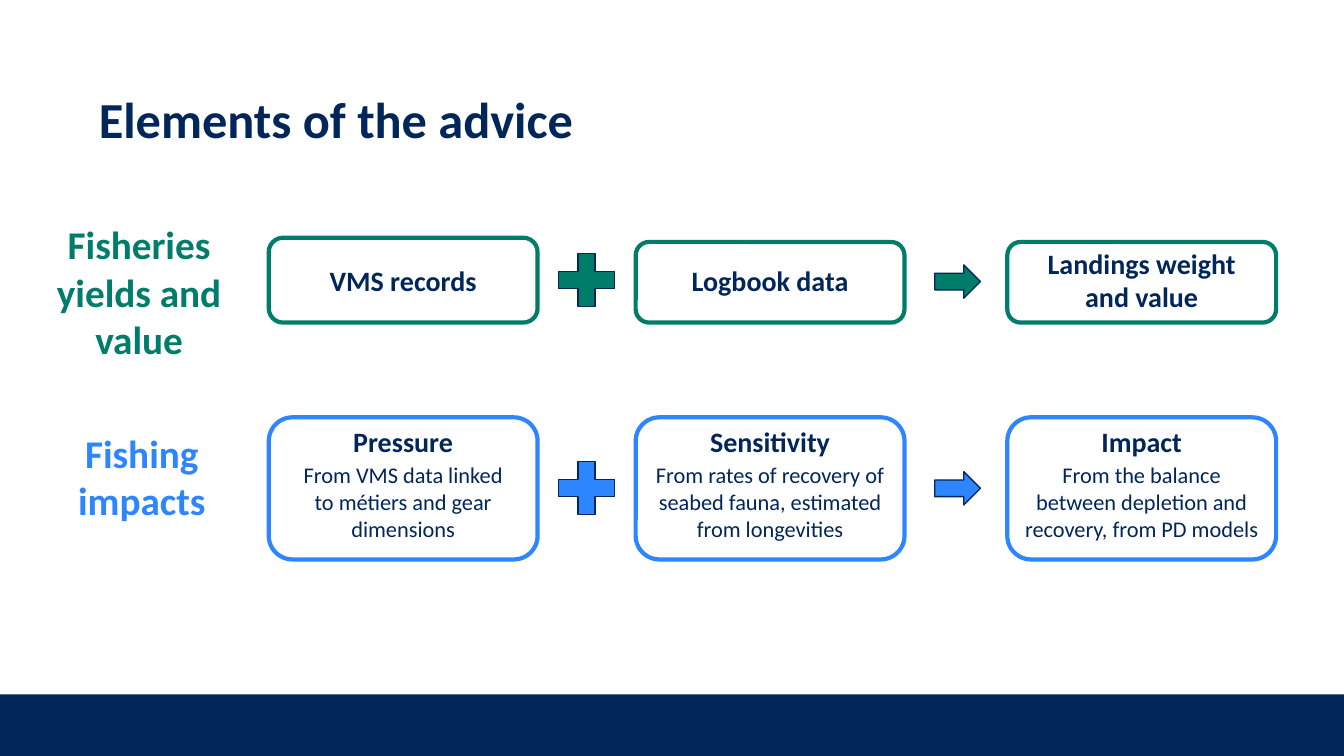
from pptx import Presentation
from pptx.dml.color import RGBColor
from pptx.enum.shapes import MSO_SHAPE
from pptx.enum.text import MSO_ANCHOR, MSO_AUTO_SIZE, PP_ALIGN
from pptx.util import Inches, Pt

NAVY = RGBColor(0x00, 0x26, 0x5A)
GREEN = RGBColor(0x00, 0x7C, 0x6B)
BLUE = RGBColor(0x2D, 0x86, 0xFF)
WHITE = RGBColor(0xFF, 0xFF, 0xFF)

FONT = "Calibri"
WIDE, HIGH = Inches(13.33), Inches(7.5)

# Grid in percent of the slide: box columns, and the signs between them
BOX_W = 20
COLS = (20, 47.3, 74.95)
PAD = 0.95
HEAD_W = BOX_W - 2 * PAD
PLUS_X, PLUS_W, PLUS_H = 40.8, 5.7, 9.6
ARROW_X, ARROW_W, ARROW_H = 69.55, 3.4, 4.4


def place(x, y, w, h):
    """Turn percent of the slide into lengths."""
    return [int(side * part / 100)
            for side, part in zip((WIDE, HIGH, WIDE, HIGH), (x, y, w, h))]


def style(frame, size, color, bold, align):
    for para in frame.paragraphs:
        para.alignment = align
        for run in para.runs:
            font = run.font
            font.name, font.size, font.bold = FONT, Pt(size), bold
            font.color.rgb = color


def add_title(slide, text):
    title = slide.shapes.title
    title.left, title.top, title.width, title.height = place(6.6, 8.4, 76.65, 15.45)
    frame = title.text_frame
    frame.text = text
    frame.auto_size = MSO_AUTO_SIZE.NONE
    frame.vertical_anchor = MSO_ANCHOR.MIDDLE
    frame.paragraphs[0].line_spacing = 0.9
    style(frame, 36, NAVY, True, PP_ALIGN.LEFT)


def add_text(slide, text, area, size, color=NAVY, bold=True):
    frame = slide.shapes.add_textbox(*place(*area)).text_frame
    frame.word_wrap = True
    frame.margin_left = frame.margin_right = 0
    frame.margin_top = frame.margin_bottom = 0
    frame.text = text
    style(frame, size, color, bold, PP_ALIGN.CENTER)


def add_form(slide, kind, area, fill, line=None, weight=1):
    shape = slide.shapes.add_shape(kind, *place(*area))
    shape.shadow.inherit = False
    shape.fill.solid()
    shape.fill.fore_color.rgb = fill
    if line is None:
        shape.line.fill.background()
    else:
        shape.line.color.rgb = line
        shape.line.width = Pt(weight)


def add_box(slide, x, y, h, color):
    add_form(slide, MSO_SHAPE.ROUNDED_RECTANGLE, (x, y, BOX_W, h), WHITE, color, 3)


def add_signs(slide, plus_y, arrow_y, color):
    add_form(slide, MSO_SHAPE.MATH_PLUS, (PLUS_X, plus_y, PLUS_W, PLUS_H), color, NAVY)
    add_form(slide, MSO_SHAPE.RIGHT_ARROW, (ARROW_X, arrow_y, ARROW_W, ARROW_H),
             color, NAVY)


def add_yields(slide):
    add_text(slide, "Fisheries yields and value", (2.05, 29.2, 16.6, 15.45), 28, GREEN)
    steps = (
        ("VMS records", 31.45, 34.8),
        ("Logbook data", 32, 34.8),
        ("Landings weight\nand value", 32, 32.55),
    )
    for x, (head, top, text_y) in zip(COLS, steps):
        add_box(slide, x, top, 42.67 - top, GREEN)
        add_text(slide, head, (x + PAD, text_y, HEAD_W, 6.25), 20)
    add_signs(slide, 32.25, 35.05, GREEN)


def add_impacts(slide):
    add_text(slide, "Fishing impacts", (2.25, 56.8, 16.6, 15.45), 28, BLUE)
    steps = (
        ("Pressure", "From VMS data linked to métiers and gear dimensions", 15.25),
        ("Sensitivity",
         "From rates of recovery of seabed fauna, estimated from longevities", 19.35),
        ("Impact",
         "From the balance between depletion and recovery, from PD models", HEAD_W),
    )
    for x, (head, body, wide) in zip(COLS, steps):
        add_box(slide, x, 55.2, 18.8, BLUE)
        add_text(slide, head, (x + PAD, 56.1, HEAD_W, 6.25), 20)
        add_text(slide, body, (x + (BOX_W - wide) / 2, 61, wide, 12.95), 16, bold=False)
    add_signs(slide, 59.75, 62.4, BLUE)


def main():
    deck = Presentation()
    deck.slide_width, deck.slide_height = WIDE, HIGH
    slide = deck.slides.add_slide(deck.slide_layouts[5])

    # Footer band and title
    add_form(slide, MSO_SHAPE.RECTANGLE, (0, 91.85, 100, 8.15), NAVY)
    add_title(slide, "Elements of the advice")

    # The two rows of the diagram
    add_impacts(slide)
    add_yields(slide)
    deck.save("out.pptx")


if __name__ == "__main__":
    main()
